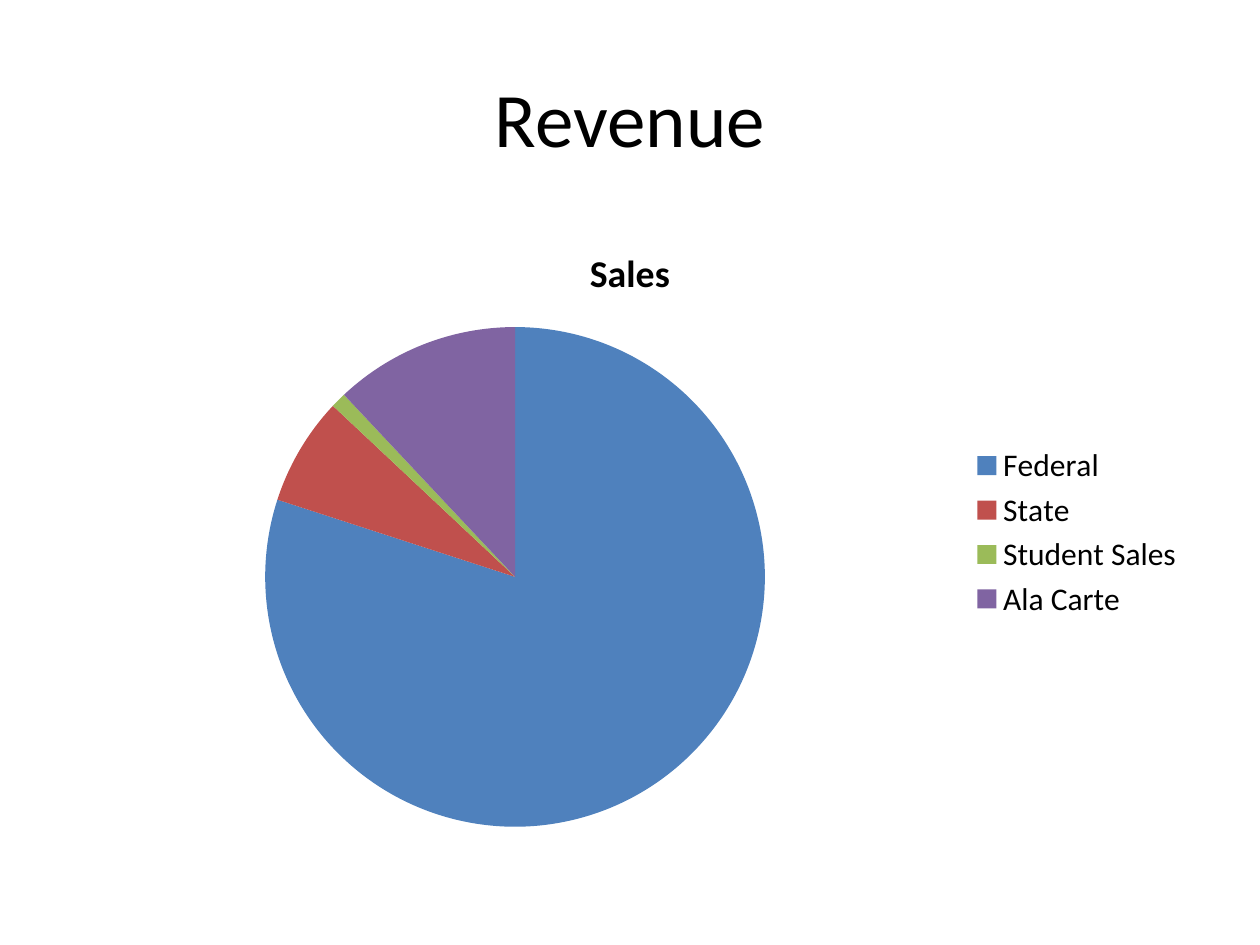
import pptx
import pptx.chart.data
import pptx.dml.color
import pptx.enum.chart
import pptx.enum.text
import pptx.util

Inches = pptx.util.Inches
FONT = "Calibri"
HUES = {
    "text": "000000",
    "Federal": "4F81BD",
    "State": "C0504D",
    "Student Sales": "9BBB59",
    "Ala Carte": "8064A2",
}
SHARES = {"Federal": 80, "State": 7, "Student Sales": 1, "Ala Carte": 12}


def write(frame, text, size, bold=False):
    line = frame.paragraphs[0]
    line.alignment = pptx.enum.text.PP_ALIGN.CENTER
    run = line.add_run()
    run.text = text
    run.font.name = FONT
    run.font.size = pptx.util.Pt(size)
    run.font.bold = bold
    run.font.color.rgb = pptx.dml.color.RGBColor.from_string(HUES["text"])


deck = pptx.Presentation()
deck.slide_width = Inches(10)
deck.slide_height = Inches(7.5)
slide = deck.slides.add_slide(deck.slide_layouts[6])

title = slide.shapes.add_textbox(Inches(0.5), Inches(0.3), Inches(9), Inches(1.25))
title.text_frame.word_wrap = True
title.text_frame.vertical_anchor = pptx.enum.text.MSO_ANCHOR.MIDDLE
write(title.text_frame, "Revenue", size=44)

data = pptx.chart.data.CategoryChartData()
data.categories = list(SHARES)
data.add_series("Sales", list(SHARES.values()))
chart = slide.shapes.add_chart(
    pptx.enum.chart.XL_CHART_TYPE.PIE,
    Inches(0.5), Inches(1.75), Inches(9), Inches(4.95), data,
).chart
chart.font.name = FONT
chart.font.size = pptx.util.Pt(18)
chart.font.color.rgb = pptx.dml.color.RGBColor.from_string(HUES["text"])

chart.has_title = True
write(chart.chart_title.text_frame, "Sales", size=21.6, bold=True)
chart.chart_title.include_in_layout = False

chart.has_legend = True
chart.legend.position = pptx.enum.chart.XL_LEGEND_POSITION.RIGHT
chart.legend.include_in_layout = False

pie = chart.plots[0]
pie.vary_by_categories = True
for spot, name in enumerate(SHARES):
    fill = pie.series[0].points[spot].format.fill
    fill.solid()
    fill.fore_color.rgb = pptx.dml.color.RGBColor.from_string(HUES[name])

deck.save("out.pptx")
